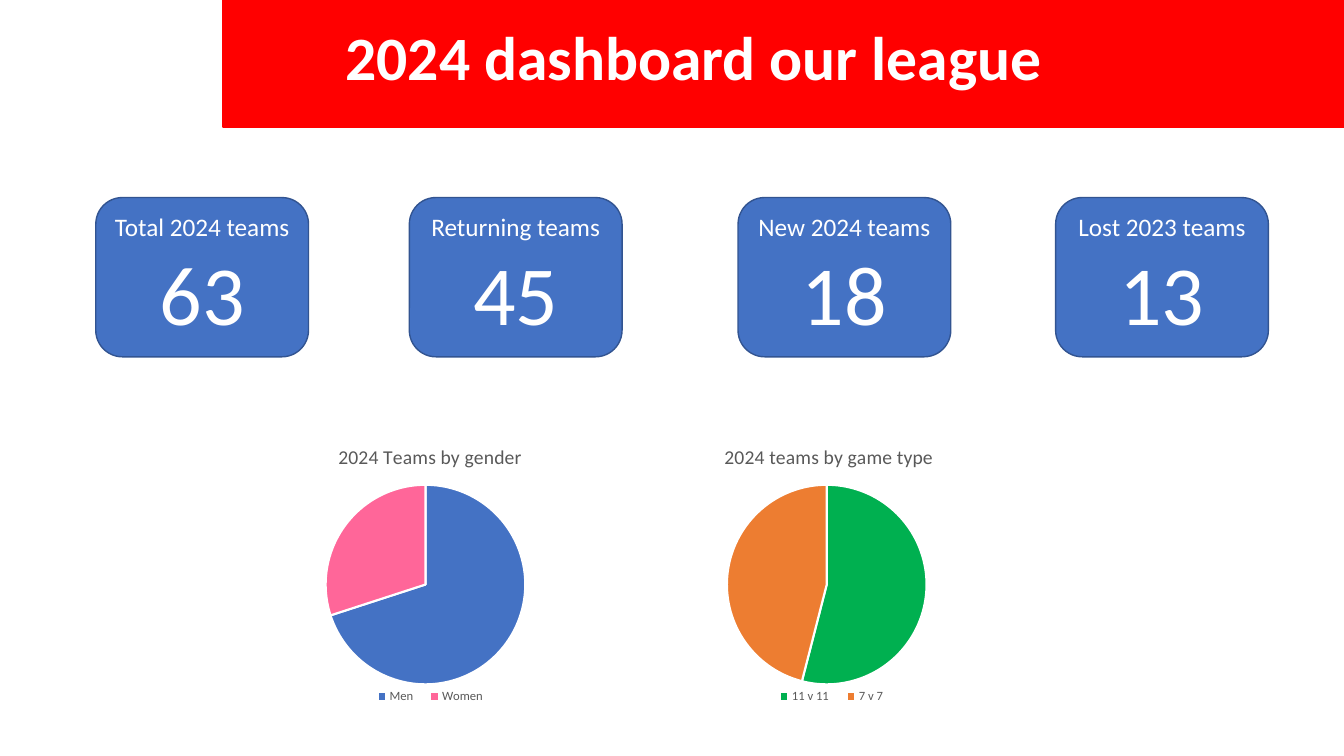
import pptx
import pptx.chart.data
import pptx.dml.color
import pptx.enum.chart
import pptx.enum.shapes
import pptx.enum.text
import pptx.oxml
import pptx.oxml.ns
import pptx.util

Inches = pptx.util.Inches
Pt = pptx.util.Pt
FONT = "Calibri"
WHITE, RED, BLUE, GREY = "FFFFFF", "FF0000", "4472C4", "595959"


def colour(hex_value):
    return pptx.dml.color.RGBColor.from_string(hex_value)


def style_font(font, size, hex_value, bold=False):
    font.name = FONT
    font.size = Pt(size)
    font.bold = bold
    font.color.rgb = colour(hex_value)


def add_run(paragraph, text, size, hex_value, bold=False):
    run = paragraph.add_run()
    run.text = text
    style_font(run.font, size, hex_value, bold)


def add_panel(slide, preset, box, fill, line):
    panel = slide.shapes.add_shape(preset, *map(Inches, box))
    panel.shadow.inherit = False
    panel.fill.solid()
    panel.fill.fore_color.rgb = colour(fill)
    panel.line.color.rgb = colour(line)
    panel.line.width = Pt(1)
    return panel


def add_header(slide, box, text):
    left, top, width, height = box
    add_panel(slide, pptx.enum.shapes.MSO_SHAPE.RECTANGLE, box, RED, RED)
    heading = slide.shapes.add_textbox(
        Inches(left + 1.12), Inches(top + 0.07), Inches(7.44), Inches(1.07))
    frame = heading.text_frame
    frame.word_wrap = True
    frame.vertical_anchor = pptx.enum.text.MSO_ANCHOR.MIDDLE
    paragraph = frame.paragraphs[0]
    paragraph.line_spacing = 0.9
    add_run(paragraph, text, 44, WHITE, bold=True)


def add_team_card(slide, box, label, count):
    card = add_panel(slide, pptx.enum.shapes.MSO_SHAPE.ROUNDED_RECTANGLE,
                     box, BLUE, "325491")
    frame = card.text_frame
    frame.word_wrap = True
    frame.vertical_anchor = pptx.enum.text.MSO_ANCHOR.MIDDLE
    label_line, count_line = frame.paragraphs[0], frame.add_paragraph()
    add_run(label_line, label, 18, WHITE)
    add_run(count_line, count, 60, WHITE)
    for paragraph in (label_line, count_line):
        paragraph.alignment = pptx.enum.text.PP_ALIGN.CENTER


def place_part(part, successors, **fractions):
    """Fix a chart part at fractions of the chart's width and height."""
    for old in part.findall(pptx.oxml.ns.qn("c:layout")):
        part.remove(old)
    values = "".join(f'<c:{key} val="{value}"/>' for key, value in fractions.items())
    layout = pptx.oxml.parse_xml(
        f'<c:layout {pptx.oxml.ns.nsdecls("c")}>'
        f'<c:manualLayout>{values}</c:manualLayout></c:layout>')
    part.insert_element_before(layout, *successors)


def add_team_pie(slide, box, title, title_left, shares):
    data = pptx.chart.data.CategoryChartData()
    data.categories = [name for name, _, _ in shares]
    data.add_series("Series 1", [share for _, share, _ in shares])
    chart = slide.shapes.add_chart(
        pptx.enum.chart.XL_CHART_TYPE.PIE, *map(Inches, box), data).chart
    style_font(chart.font, 10, "000000")

    # Title
    chart.has_title = True
    add_run(chart.chart_title.text_frame.paragraphs[0], title, 14, GREY)
    chart.chart_title.include_in_layout = False

    # Legend
    chart.has_legend = True
    chart.legend.position = pptx.enum.chart.XL_LEGEND_POSITION.BOTTOM
    chart.legend.include_in_layout = False
    style_font(chart.legend.font, 9, GREY)

    # Slices
    plot = chart.plots[0]
    plot.vary_by_categories = True
    for index, (_, _, fill) in enumerate(shares):
        slice_format = plot.series[0].points[index].format
        slice_format.fill.solid()
        slice_format.fill.fore_color.rgb = colour(fill)
        slice_format.line.color.rgb = colour(WHITE)
        slice_format.line.width = Pt(1.5)

    # Positions inside the chart
    plot_area = plot_area_of(chart)
    place_part(chart.chart_title._element, ("c:overlay", "c:spPr", "c:txPr"),
               xMode="edge", yMode="edge", x=title_left, y=0.05)
    place_part(plot_area, ("c:pieChart",), layoutTarget="inner",
               xMode="edge", yMode="edge", x=0.3, y=0.2, w=0.4, h=0.66)
    place_part(chart.legend._element, ("c:overlay", "c:spPr", "c:txPr"),
               xMode="edge", yMode="edge", x=0.38, y=0.86, w=0.26, h=0.08)


def plot_area_of(chart):
    return chart._chartSpace.chart.plotArea


def main():
    deck = pptx.Presentation()
    deck.slide_width, deck.slide_height = Inches(13.33), Inches(7.5)
    slide = deck.slides.add_slide(deck.slide_layouts[6])

    add_header(slide, (2.21, 0, 11.12, 1.26), "2024 dashboard our league")

    # Team counts
    cards = [(0.95, "Total 2024 teams", "63"), (4.06, "Returning teams", "45"),
             (7.32, "New 2024 teams", "18"), (10.47, "Lost 2023 teams", "13")]
    for left, label, count in cards:
        add_team_card(slide, (left, 1.96, 2.11, 1.58), label, count)

    # Team shares
    add_team_pie(slide, (1.72, 4.21, 5, 3), "2024 Teams by gender", 0.32,
                 [("Men", 70, BLUE), ("Women", 30, "FF6699")])
    add_team_pie(slide, (5.7, 4.21, 5, 3), "2024 teams by game type", 0.29,
                 [("11 v 11", 54, "00B050"), ("7 v 7", 46, "ED7D31")])

    deck.save("out.pptx")


if __name__ == "__main__":
    main()
